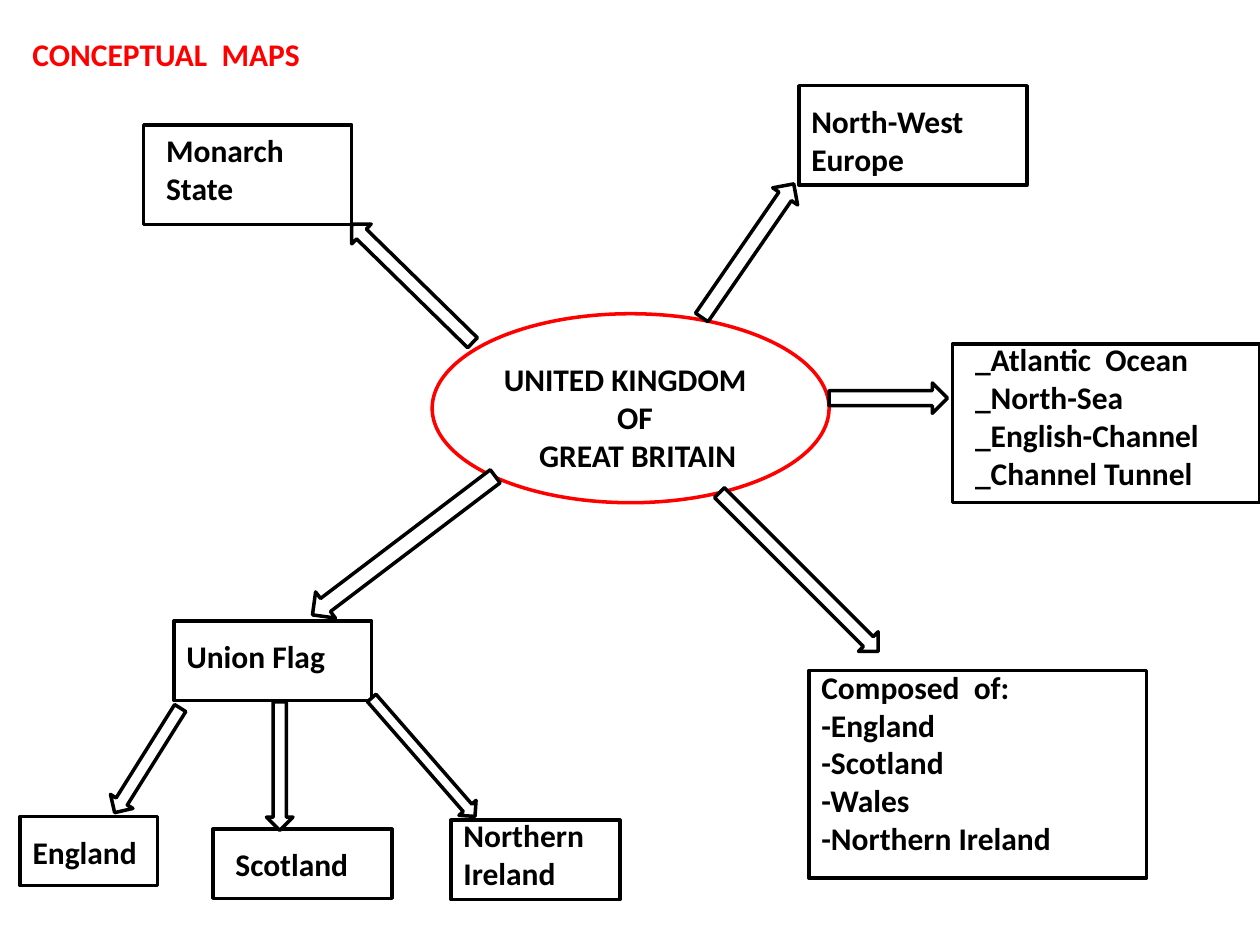
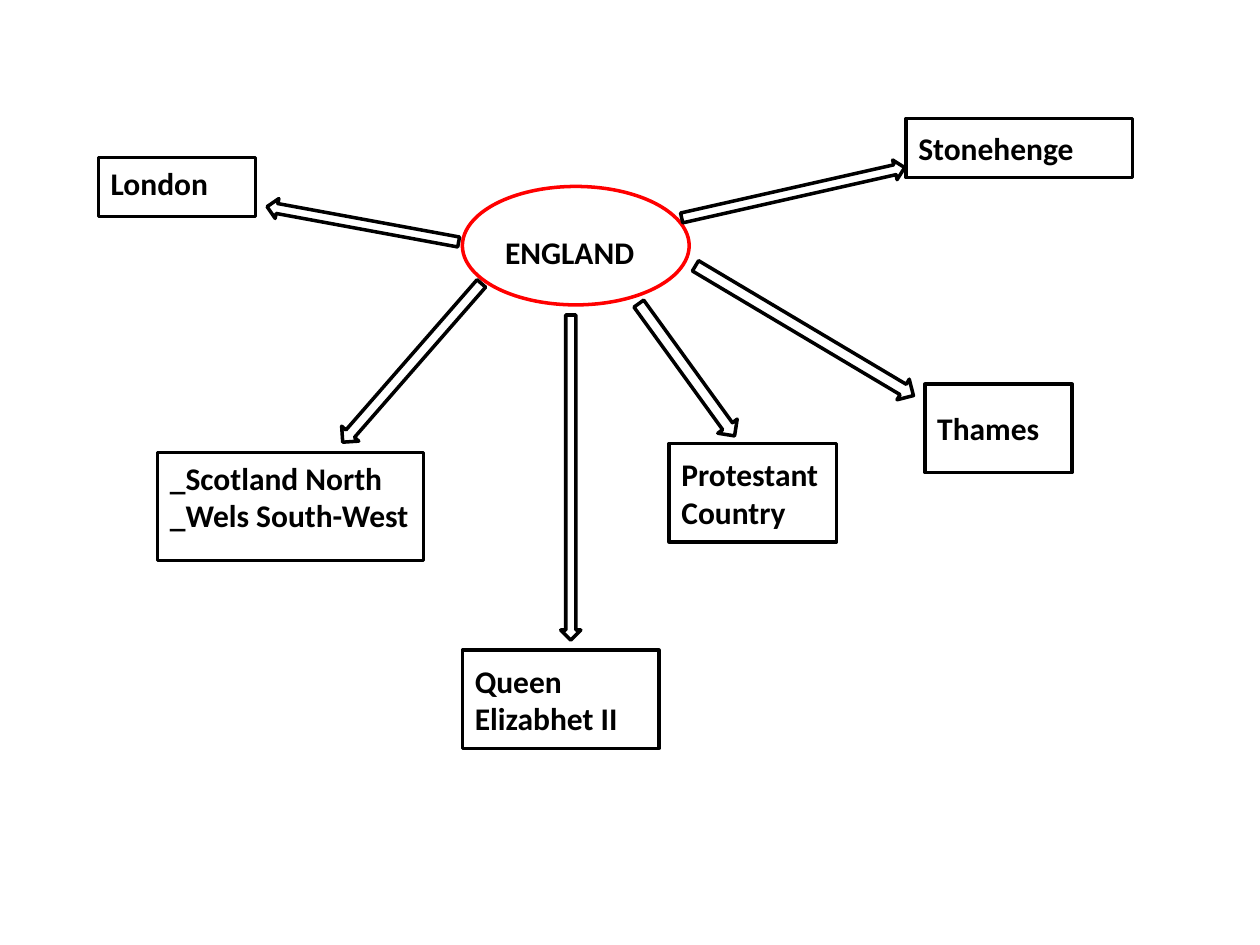
from math import atan2, degrees, hypot

from pptx import Presentation
from pptx.dml.color import RGBColor
from pptx.enum.shapes import MSO_SHAPE as SHAPE
from pptx.enum.text import MSO_ANCHOR as ANCHOR, PP_ALIGN as ALIGN
from pptx.util import Inches, Pt

WHITE, BLACK, RED = "FFFFFF", "000000", "FF0000"
FONT, TEXT_SIZE, LINE_WIDTH = "Calibri", 18, 2


def color(hex_code):
    """Turn a hex string into a colour."""
    return RGBColor.from_string(hex_code)


def write(shape, text, text_color=BLACK, anchor=ANCHOR.TOP):
    """Write bold, left-aligned lines into a shape."""
    frame = shape.text_frame
    frame.text = text
    frame.word_wrap = True
    frame.vertical_anchor = anchor
    for para in frame.paragraphs:
        para.alignment = ALIGN.LEFT
        for span in para.runs:
            span.font.name = FONT
            span.font.size = Pt(TEXT_SIZE)
            span.font.bold = True
            span.font.color.rgb = color(text_color)


def add_outline(page, kind, left, top, width, height, line_color=BLACK):
    """Add a white shape with a coloured outline."""
    shape = page.shapes.add_shape(
        kind, Inches(left), Inches(top), Inches(width), Inches(height))
    shape.shadow.inherit = False
    shape.fill.solid()
    shape.fill.fore_color.rgb = color(WHITE)
    shape.line.color.rgb = color(line_color)
    shape.line.width = Pt(LINE_WIDTH)
    return shape


def add_topic(page, left, top, width, height):
    """Add the red ellipse at the heart of a map."""
    add_outline(page, SHAPE.OVAL, left, top, width, height, RED)


def add_frame(page, left, top, width, height, text=None):
    """Add a black frame, with its text centred vertically if given."""
    frame = add_outline(page, SHAPE.RECTANGLE, left, top, width, height)
    if text:
        write(frame, text, anchor=ANCHOR.MIDDLE)


def add_label(page, left, top, width, height, text, text_color=BLACK, indents=()):
    """Add a text box, with an optional indent for each line."""
    box = page.shapes.add_textbox(
        Inches(left), Inches(top), Inches(width), Inches(height))
    write(box, text, text_color)
    for para, indent in zip(box.text_frame.paragraphs, indents):
        para._p.get_or_add_pPr().set("marL", str(Inches(indent)))


def add_arrow(page, start, end, thickness):
    """Add a block arrow that runs from start to end."""
    (x1, y1), (x2, y2) = start, end
    length = hypot(x2 - x1, y2 - y1)
    arrow = add_outline(page, SHAPE.RIGHT_ARROW, (x1 + x2 - length) / 2,
                        (y1 + y2 - thickness) / 2, length, thickness)
    arrow.rotation = degrees(atan2(y2 - y1, x2 - x1))


def build_kingdom_map(page):
    """Draw the map of the United Kingdom."""
    add_topic(page, 3.43, 2.49, 3.15, 1.5)
    add_label(page, 3.9, 2.81, 2.6, 1.01, "UNITED KINGDOM\nOF\nGREAT BRITAIN",
              indents=(0, 0.9, 0.28))

    frames = [
        (1.14, 0.99, 1.65, 0.79),
        (6.34, 0.68, 1.81, 0.79),
        (7.56, 2.73, 2.44, 1.26),
        (1.38, 4.93, 1.57, 0.63),
        (3.58, 6.51, 1.34, 0.63),
        (1.69, 6.58, 1.42, 0.55),
        (0.16, 6.48, 1.09, 0.55),
        (6.42, 5.32, 2.68, 1.65),
    ]
    for frame in frames:
        add_frame(page, *frame)

    arrows = [
        ((5.57, 2.52), (6.3, 1.46), 0.24),
        ((6.58, 3.16), (7.52, 3.16), 0.24),
        ((3.75, 2.72), (2.79, 1.78), 0.22),
        ((3.93, 3.78), (2.48, 4.88), 0.26),
        ((2.22, 5.57), (2.22, 6.59), 0.21),
        ((2.95, 5.54), (3.77, 6.48), 0.18),
        ((1.43, 5.62), (0.91, 6.45), 0.21),
        ((5.71, 3.91), (6.97, 5.17), 0.22),
    ]
    for arrow in arrows:
        add_arrow(page, *arrow)

    labels = [
        (1.22, 0.99, 1.5, 0.71, "Monarch\nState"),
        (6.34, 0.76, 1.81, 0.71, "North-West\nEurope"),
        (7.64, 2.65, 2.36, 1.31,
         "_Atlantic  Ocean\n_North-Sea\n_English-Channel\n_Channel Tunnel"),
        (1.38, 5.01, 2.28, 0.4, "Union Flag"),
        (0.16, 6.56, 2.01, 0.4, "England"),
        (1.77, 6.66, 1.34, 0.4, "Scotland"),
        (3.58, 6.43, 1.5, 0.71, "Northern\nIreland"),
        (6.42, 5.25, 3.31, 1.62,
         "Composed  of:\n-England\n-Scotland\n-Wales\n-Northern Ireland"),
        (0.16, 0.23, 5.47, 0.4, "CONCEPTUAL  MAPS", RED),
    ]
    for label in labels:
        add_label(page, *label)


def build_england_map(page):
    """Draw the map of England."""
    add_topic(page, 3.67, 1.48, 1.8, 0.94)

    frames = [
        (0.78, 1.25, 1.25, 0.47),
        (1.25, 3.59, 2.11, 0.86),
        (3.67, 5.16, 1.56, 0.78, "Queen\nElizabhet II"),
        (7.34, 3.05, 1.17, 0.7, "Thames"),
        (5.31, 3.52, 1.33, 0.78, "Protestant Country"),
        (7.19, 0.94, 1.8, 0.47, "Stonehenge"),
    ]
    for frame in frames:
        add_frame(page, *frame)

    arrows = [
        ((3.64, 1.92), (2.12, 1.64), 0.16),
        ((3.82, 2.25), (2.72, 3.51), 0.18),
        ((4.53, 2.5), (4.53, 5.08), 0.16),
        ((5.07, 2.41), (5.83, 3.46), 0.19),
        ((5.41, 1.73), (7.18, 1.33), 0.16),
        ((5.52, 2.11), (7.25, 3.14), 0.19),
    ]
    for arrow in arrows:
        add_arrow(page, *arrow)

    labels = [
        (3.91, 1.8, 1.95, 0.4, "ENGLAND"),
        (0.78, 1.25, 1.41, 0.4, "London"),
        (1.25, 3.59, 2.42, 0.71, "_Scotland North\n_Wels South-West"),
    ]
    for label in labels:
        add_label(page, *label)


def main():
    """Build and save the deck."""
    deck = Presentation()
    deck.slide_width, deck.slide_height = Inches(10), Inches(7.5)
    for build_map in (build_kingdom_map, build_england_map):
        build_map(deck.slides.add_slide(deck.slide_layouts[6]))
    deck.save("out.pptx")


if __name__ == "__main__":
    main()
